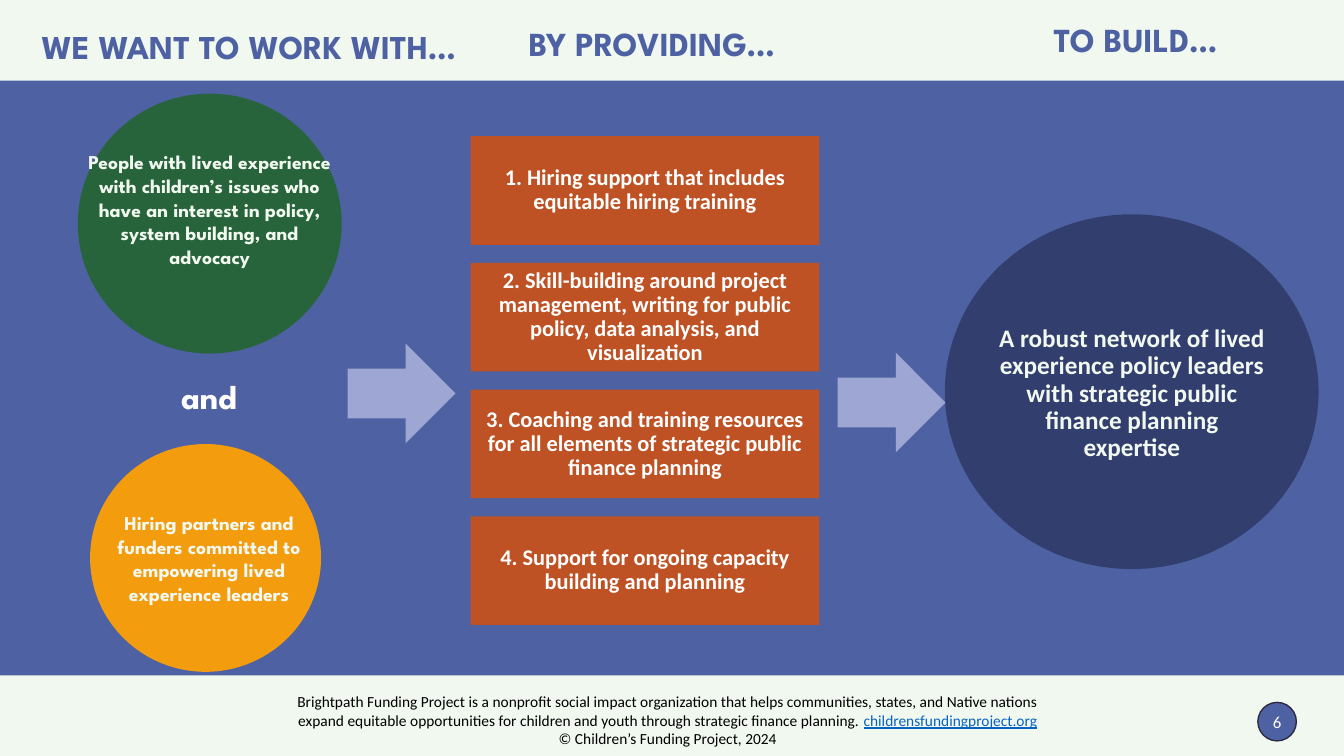
from pptx import Presentation
from pptx.dml.color import RGBColor
from pptx.enum.shapes import MSO_SHAPE as SHAPE
from pptx.enum.text import MSO_ANCHOR as ANCHOR, PP_ALIGN as ALIGN
from pptx.util import Cm, Pt

MINT = RGBColor(0xF0, 0xF8, 0xEF)
INDIGO = RGBColor(0x4E, 0x62, 0xA3)
NAVY = RGBColor(0x32, 0x3E, 0x6E)
LAVENDER = RGBColor(0x9E, 0xA7, 0xD3)
GREEN = RGBColor(0x28, 0x64, 0x3B)
AMBER = RGBColor(0xF2, 0x9C, 0x0E)
RUST = RGBColor(0xBE, 0x52, 0x24)
INK = RGBColor(0x2D, 0x2A, 0x44)
LINK = RGBColor(0x05, 0x63, 0xC1)
WHITE = RGBColor(0xFF, 0xFF, 0xFF)
BLACK = RGBColor(0x00, 0x00, 0x00)

BODY = "Calibri"
DISPLAY = "League Spartan"

OFFERS = [
    "1. Hiring support that includes equitable hiring training",
    "2. Skill-building around project management, writing for public policy, "
    "data analysis, and visualization",
    "3. Coaching and training resources for all elements of strategic public finance planning",
    "4. Support for ongoing capacity building and planning",
]
MISSION = (
    "Brightpath Funding Project is a nonprofit social impact organization that helps "
    "communities, states, and Native nations expand equitable opportunities for children "
    "and youth through strategic finance planning. "
)


def add_run(p, text, size, font, color, bold=False, underline=False):
    """Append one formatted run to a paragraph."""
    r = p.add_run()
    r.text = text
    r.font.size = Pt(size)
    r.font.name = font
    r.font.color.rgb = color
    r.font.bold = bold
    r.font.underline = underline


def set_frame(sp, anchor, inset_x=0.25, inset_y=0.13):
    """Prepare a wrapping text frame and return its first paragraph, centred."""
    tf = sp.text_frame
    tf.word_wrap = True
    tf.vertical_anchor = anchor
    tf.margin_left = tf.margin_right = Cm(inset_x)
    tf.margin_top = tf.margin_bottom = Cm(inset_y)
    p = tf.paragraphs[0]
    p.alignment = ALIGN.CENTER
    return p


def add_figure(s, kind, box, fill, line=None):
    """Add a filled preset shape, outlined only when a line colour is given."""
    sp = s.shapes.add_shape(kind, *map(Cm, box))
    sp.shadow.inherit = False
    sp.fill.solid()
    sp.fill.fore_color.rgb = fill
    if line is None:
        sp.line.fill.background()
    else:
        sp.line.color.rgb = line
        sp.line.width = Pt(1)
    return sp


def add_label(s, box, text, size, font, color, spacing=1.0, anchor=ANCHOR.TOP):
    """Add a text box holding one bold centred paragraph."""
    p = set_frame(s.shapes.add_textbox(*map(Cm, box)), anchor)
    p.line_spacing = spacing
    add_run(p, text, size, font, color, bold=True)


def add_heading(s, box, text, size=24, spacing=0.9):
    """Add a column heading."""
    add_label(s, box, text, size, DISPLAY, INDIGO, spacing, ANCHOR.MIDDLE)


def add_circle(s, box, fill):
    """Add a round connector shape turned a quarter turn."""
    add_figure(s, SHAPE.FLOWCHART_CONNECTOR, box, fill).rotation = 90


def add_partners(s, x, y, w):
    """Add the two partner circles joined by a word."""
    add_circle(s, (x + 0.05, y, 6.55, 6.65), GREEN)
    add_label(s, (x, y + 1.35, w, 3.86),
              "People with lived experience with children’s issues who have an interest "
              "in policy, system building, and advocacy", 14, DISPLAY, MINT)
    add_label(s, (x - 0.21, y + 7.04, 7.04, 1.27), "and", 24, DISPLAY, WHITE)
    add_circle(s, (x + 0.35, y + 8.84, 5.74, 5.82), AMBER)
    add_label(s, (x + 0.3, y + 10.44, 6.02, 2.64),
              "Hiring partners and funders committed to empowering lived experience leaders",
              14, DISPLAY, MINT)


def add_offers(s, x, y, w, h):
    """Stack the offer cards evenly in the given box."""
    card_h = 2.74
    pitch = (h - card_h) / (len(OFFERS) - 1)
    for i, offer in enumerate(OFFERS):
        sp = add_figure(s, SHAPE.RECTANGLE, (x, y + i * pitch, w, card_h), RUST)
        p = set_frame(sp, ANCHOR.MIDDLE, inset_x=0.13)
        p.line_spacing = 0.9
        add_run(p, offer, 16, BODY, WHITE, bold=True)


def add_goal(s, x, y, w, h):
    """Add the large goal circle with its statement."""
    add_circle(s, (x, y, w, h), NAVY)
    add_label(s, (x + 0.79, y + 2.92, w - 1.57, 3.78),
              "A robust network of lived experience policy leaders with strategic public "
              "finance planning expertise", 18, BODY, MINT, 0.9)


def add_footer(s, x, y, w, h):
    """Add the mission statement, copyright line and page badge."""
    sp = s.shapes.add_textbox(Cm(x), Cm(y), Cm(w), Cm(h))
    p = set_frame(sp, ANCHOR.TOP)
    add_run(p, MISSION, 11, BODY, BLACK)
    add_run(p, "childrensfundingproject.org", 11, BODY, LINK, underline=True)
    p = sp.text_frame.add_paragraph()
    p.alignment = ALIGN.CENTER
    add_run(p, "© Children’s Funding Project, 2024", 11, BODY, BLACK)
    badge = add_figure(s, SHAPE.OVAL, (x + 24.84, y + 0.38, 0.97, 0.97), INDIGO, INK)
    add_run(set_frame(badge, ANCHOR.MIDDLE, 0, 0), "6", 12, BODY, WHITE)


def main():
    """Build the slide and save it."""
    prs = Presentation()
    prs.slide_width, prs.slide_height = Cm(33.87), Cm(19.05)
    s = prs.slides.add_slide(prs.slide_layouts[6])
    s.background.fill.solid()
    s.background.fill.fore_color.rgb = MINT

    add_figure(s, SHAPE.RECTANGLE, (0, 2.03, 33.87, 14.99), INDIGO)
    add_heading(s, (0.28, 0.38, 11.96, 1.75), "WE WANT TO WORK WITH…", 23.8, 0.8)
    add_heading(s, (12.19, 0.28, 8.46, 1.75), "BY PROVIDING…")
    add_heading(s, (24.38, 0.18, 8.46, 1.75), "TO BUILD…")
    add_partners(s, 1.96, 2.31, 6.65)
    add_offers(s, 11.86, 3.43, 8.79, 12.32)
    add_goal(s, 24.05, 5.16, 8.94, 9.42)
    for x, y in ((8.76, 8.66), (21.11, 8.89)):
        add_figure(s, SHAPE.RIGHT_ARROW, (x, y, 2.72, 2.51), LAVENDER)
    add_footer(s, 6.86, 17.32, 19.94, 1.7)
    prs.save("out.pptx")


if __name__ == "__main__":
    main()
